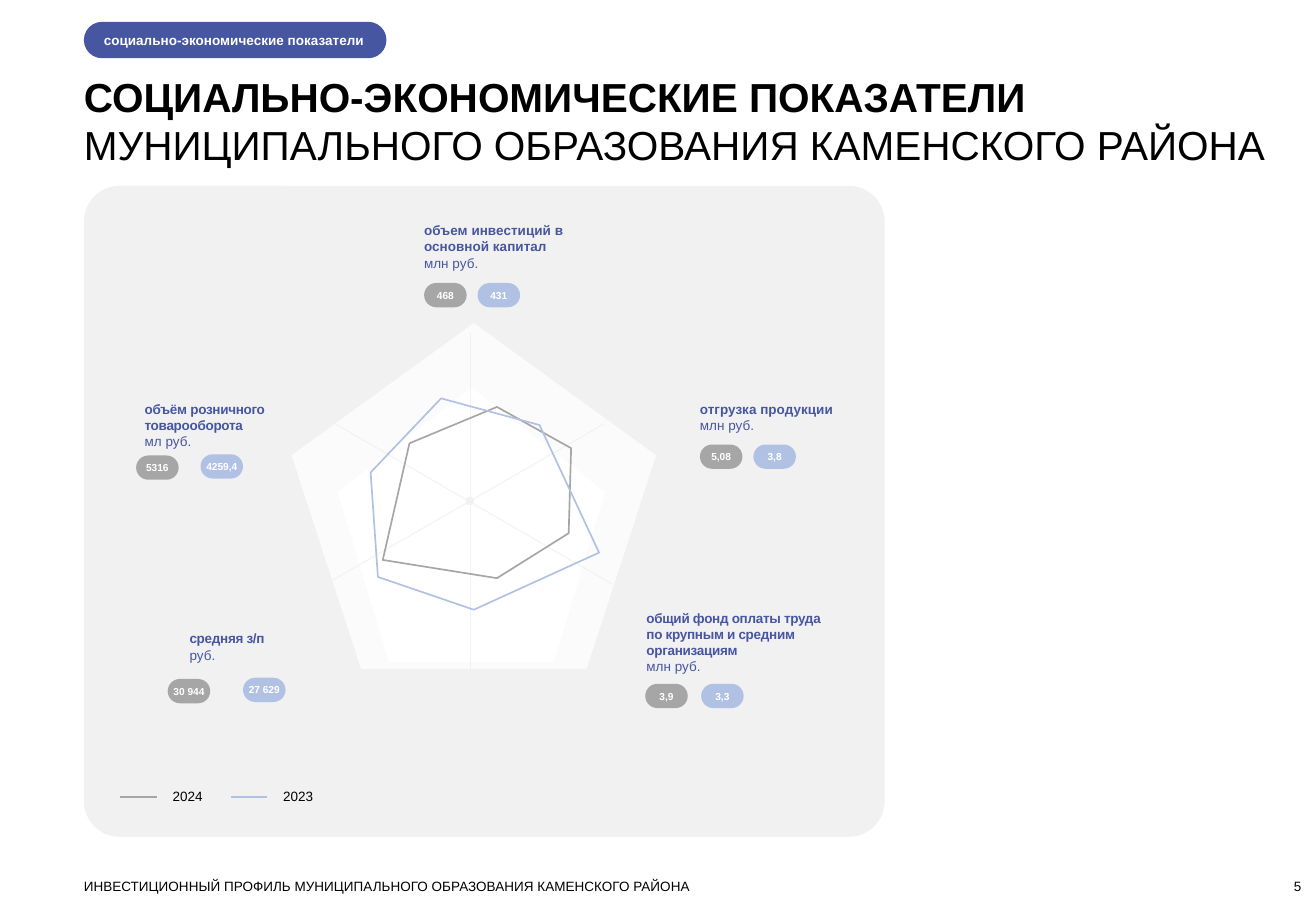
from lxml.etree import SubElement
from pptx import Presentation
from pptx.dml.color import RGBColor
from pptx.enum.shapes import MSO_CONNECTOR as Link, MSO_SHAPE as Form
from pptx.enum.text import MSO_ANCHOR as Anchor, MSO_AUTO_SIZE as Fit, PP_ALIGN as Align
from pptx.oxml.ns import qn
from pptx.util import Inches, Pt

BLUE = RGBColor(0x47, 0x56, 0xA0)
SKY = RGBColor(0xB1, 0xC1, 0xE4)
GRAY = RGBColor(0xA6, 0xA6, 0xA6)
PALE = RGBColor(0xF1, 0xF1, 0xF1)
MIST = RGBColor(0xFB, 0xFB, 0xFB)
WHITE = RGBColor(0xFF, 0xFF, 0xFF)
BLACK = RGBColor(0, 0, 0)

SMALL = {"name": "Arial", "size": Pt(8), "bold": False}
STRONG = {**SMALL, "bold": True}
TINY = {**STRONG, "size": Pt(6)}
HEAD = {**STRONG, "size": Pt(24)}
SUB = {**HEAD, "bold": False}
FRAME = {
    "margin_left": 0, "margin_right": 0, "margin_top": 0, "margin_bottom": 0,
    "word_wrap": True, "auto_size": Fit.NONE, "vertical_anchor": Anchor.TOP,
}

YEARS = [("2024", GRAY, 0.99), ("2023", SKY, 1.9)]
TRACES = [
    (GRAY, [(3.37, 3.65), (4.09, 3.35), (4.7, 3.69), (4.68, 4.39), (4.09, 4.76), (3.15, 4.61)]),
    (SKY, [(4.93, 4.55), (3.9, 5.02), (3.11, 4.75), (3.05, 3.89), (3.63, 3.28), (4.44, 3.5)]),
]
AXES = [(3.87, 2.73, 3.87, 5.58), (4.97, 3.49, 2.68, 4.81), (2.76, 3.49, 5.04, 4.81)]
TOPICS = [
    ((3.49, 1.83, 1.23, 0.4), "объем инвестиций в основной капитал", "млн руб.", 0,
     [("468", 3.49, 2.33), ("431", 3.93, 2.33)]),
    ((5.76, 3.3, 1.23, 0.27), "отгрузка продукции", "млн руб.", 0,
     [("5,08", 5.76, 3.66), ("3,8", 6.2, 3.66)]),
    ((5.32, 5.02, 1.5, 0.54), "общий фонд оплаты труда по крупным и средним организациям",
     "млн руб.", -20, [("3,9", 5.31, 5.63), ("3,3", 5.77, 5.63)]),
    ((1.19, 3.3, 1.08, 0.4), "объём розничного товарооборота", "мл руб.", -20,
     [("5316", 1.12, 3.75), ("4259,4", 1.65, 3.74)]),
    ((1.56, 5.19, 1.08, 0.27), "средняя з/п", "руб.", -20,
     [("30 944", 1.38, 5.59), ("27 629", 2, 5.58)]),
]


def apply(item, style):
    for key, value in style.items():
        setattr(item, key, value)


def write(shape, lines, color, align=Align.LEFT, **extra):
    frame = shape.text_frame
    apply(frame, {**FRAME, **extra})
    for i, (text, style) in enumerate(lines):
        par = frame.add_paragraph() if i else frame.paragraphs[0]
        par.alignment = align
        run = par.add_run()
        run.text = text
        apply(run.font, style)
        run.font.color.rgb = color


def text(shapes, box, lines, color=BLACK, **extra):
    shape = shapes.add_textbox(*map(Inches, box))
    write(shape, lines, color, **extra)
    return shape


def block(shapes, form, box, fill, curve=None):
    shape = shapes.add_shape(form, *map(Inches, box))
    shape.shadow.inherit = False
    shape.fill.solid()
    shape.fill.fore_color.rgb = fill
    shape.line.fill.background()
    if curve is not None:
        shape.adjustments[0] = curve
    return shape


def line(shapes, ends, color, width):
    link = shapes.add_connector(Link.STRAIGHT, *map(Inches, ends))
    link.line.color.rgb = color
    link.line.width = Pt(width)
    SubElement(link._element.spPr, qn("a:effectLst"))


def trace(shapes, color, points):
    first, *rest = [(Inches(x), Inches(y)) for x, y in points]
    pen = shapes.build_freeform(*first)
    pen.add_line_segments(rest, close=True)
    shape = pen.convert_to_shape()
    shape.shadow.inherit = False
    shape.fill.background()
    shape.line.color.rgb = color
    shape.line.width = Pt(1)


def topic(shapes, box, name, unit, space, pills):
    label = text(shapes, box, [(name, STRONG), (unit, SMALL)], BLUE)
    if space:
        run = label.text_frame.paragraphs[0].runs[0]
        run._r.get_or_add_rPr().set("spc", str(space))
    for (value, x, y), fill in zip(pills, (GRAY, SKY)):
        pill = block(shapes, Form.ROUNDED_RECTANGLE, (x, y, 0.35, 0.2), fill, 0.5)
        write(pill, [(value, TINY)], WHITE, Align.CENTER, vertical_anchor=Anchor.MIDDLE)


def radar(shapes):
    group = shapes.add_group_shape().shapes
    block(group, Form.REGULAR_PENTAGON, (2.4, 2.66, 3, 2.85), MIST)
    block(group, Form.REGULAR_PENTAGON, (2.78, 3.19, 2.2, 2.26), WHITE)
    for ends in AXES:
        line(group, ends, PALE, 0.5)
    block(group, Form.OVAL, (3.83, 4.09, 0.07, 0.07), PALE)


def legend(shapes):
    for year, color, x in YEARS:
        line(shapes, (x, 6.56, x + 0.3, 6.56), color, 1)
        text(shapes, (x + 0.43, 6.49, 0.29, 0.13), [(year, SMALL)])


def title(shapes):
    shape = shapes.title
    keys = ("left", "top", "width", "height")
    apply(shape, dict(zip(keys, map(Inches, (0.69, 0.59, 9.74, 0.81)))))
    write(shape, [
        ("СОЦИАЛЬНО-ЭКОНОМИЧЕСКИЕ ПОКАЗАТЕЛИ", HEAD),
        ("МУНИЦИПАЛЬНОГО ОБРАЗОВАНИЯ КАМЕНСКОГО РАЙОНА", SUB),
    ], BLACK)


def main():
    deck = Presentation()
    deck.slide_width, deck.slide_height = Inches(10.83), Inches(7.5)
    shapes = deck.slides.add_slide(deck.slide_layouts[5]).shapes
    title(shapes)
    badge = block(shapes, Form.ROUNDED_RECTANGLE, (0.69, 0.18, 2.49, 0.3), BLUE, 0.5)
    write(badge, [("социально-экономические показатели", STRONG)], WHITE,
          margin_left=Inches(0.12), vertical_anchor=Anchor.MIDDLE)
    block(shapes, Form.ROUNDED_RECTANGLE, (0.69, 1.53, 6.59, 5.36), PALE, 0.055)
    legend(shapes)
    radar(shapes)
    for entry in TOPICS:
        topic(shapes, *entry)
    for color, points in TRACES:
        trace(shapes, color, points)
    text(shapes, (0.69, 7.23, 8, 0.13),
         [("ИНВЕСТИЦИОННЫЙ ПРОФИЛЬ МУНИЦИПАЛЬНОГО ОБРАЗОВАНИЯ КАМЕНСКОГО РАЙОНА", SMALL)])
    text(shapes, (9.91, 7.23, 0.8, 0.13), [("5", SMALL)],
         align=Align.RIGHT, vertical_anchor=Anchor.BOTTOM)
    deck.save("out.pptx")


if __name__ == "__main__":
    main()
